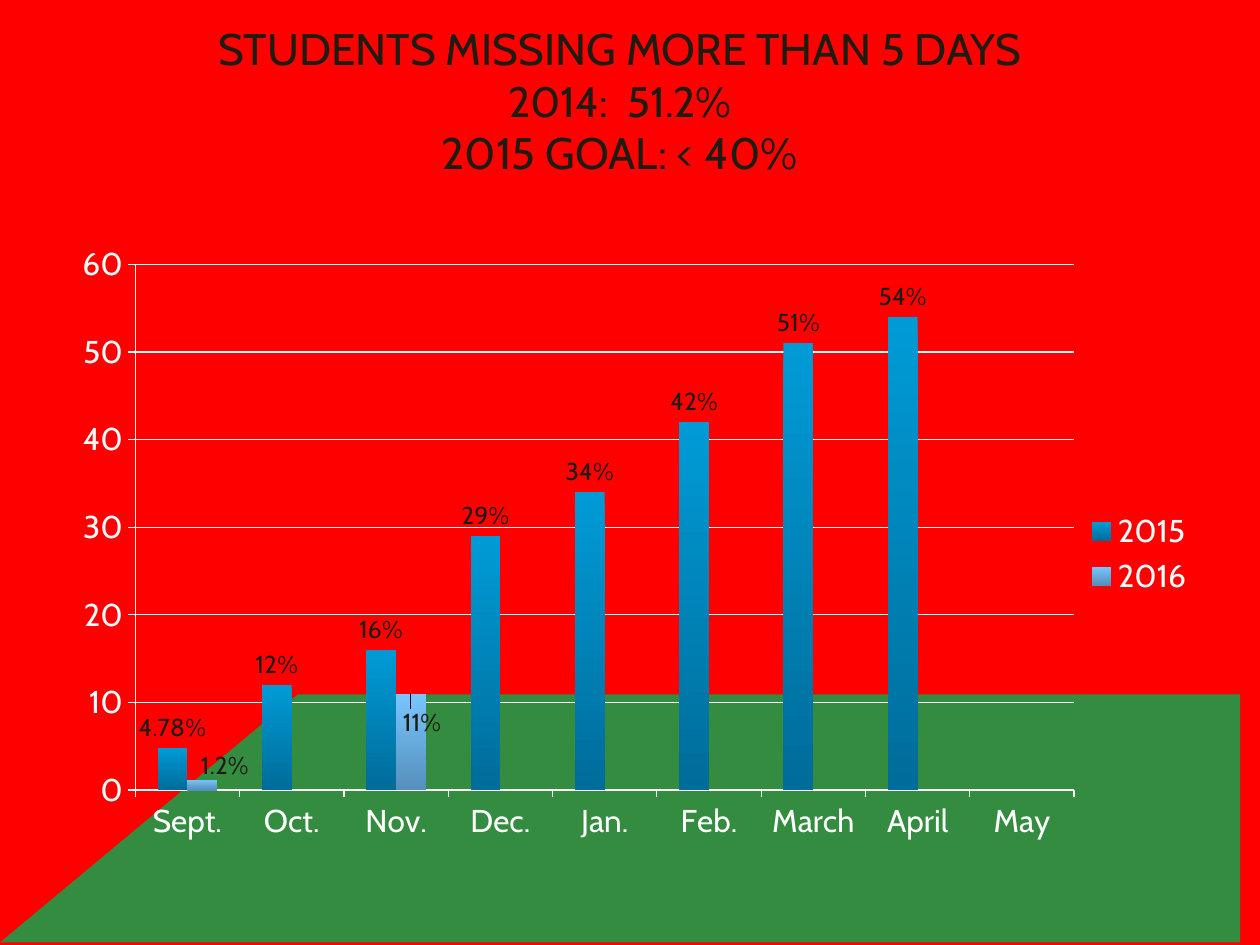
from lxml.etree import SubElement as Sub
from pptx import Presentation
from pptx.chart.data import CategoryChartData as Data
from pptx.dml.color import RGBColor as Color
from pptx.enum.chart import XL_CHART_TYPE as Kind, XL_LABEL_POSITION as Spot
from pptx.enum.chart import XL_LEGEND_POSITION as Side, XL_TICK_MARK as Tick
from pptx.enum.text import MSO_ANCHOR as Anchor, MSO_AUTO_SIZE as Auto, PP_ALIGN as Align
from pptx.oxml.ns import qn
from pptx.util import Cm, Pt

FONT, WHITE, DARK = "Cabin", "FFFFFF", "1E1C11"
TITLE = [
    ("STUDENTS MISSING MORE THAN 5 DAYS", 25.2),
    ("2014:  51.2%", 24.3),
    ("2015 GOAL: < 40%", 25.2),
]
MONTHS = ["Sept.", "Oct.", "Nov.", "Dec.", "Jan.", "Feb.", "March", "April", "May"]
SERIES = [
    ("2015", [4.78, 12, 16, 29, 34, 42, 51, 54, None], ("009BD6", "006C9A")),
    ("2016", [1.2, None, 11] + [None] * 6, ("78C6FF", "568FBB")),
]
MOVED = {0: ("1.2%", 0.02, 0.01), 2: ("11%", 0.01, 0.08)}
PLOT = {"x": 0.055, "y": 0.036, "w": 0.828, "h": 0.843}
HILL = [(0, 19.05), (5.66, 14.02), (25.4, 14.05), (25.4, 19.05)]


def paint(fill, tone):
    fill.solid()
    fill.fore_color.rgb = Color.from_string(tone)


def style(font, size, tone):
    font.name, font.size, font.bold = FONT, Pt(size), False
    font.color.rgb = Color.from_string(tone)


def place(layout, parts):
    box = Sub(layout, qn("c:manualLayout"))
    for tag, val in parts.items():
        Sub(box, qn("c:" + tag)).set("val", str(val))


def add_hill(slide):
    build = slide.shapes.build_freeform(*HILL[0], scale=float(Cm(1)))
    build.add_line_segments(HILL[1:], close=True)
    hill = build.convert_to_shape()
    hill.shadow.inherit = False
    hill.line.fill.background()
    paint(hill.fill, "00B050")
    tone = hill.fill._xPr.find(".//" + qn("a:srgbClr"))
    Sub(tone, qn("a:alpha")).set("val", "80000")


def add_title(slide):
    title = slide.shapes.title
    title.left, title.top, title.width, title.height = Cm(0.43), Cm(0.43), Cm(24.13), Cm(3.18)
    frame = title.text_frame
    frame.text = "\v".join(text for text, size in TITLE)
    frame.auto_size, frame.word_wrap = Auto.NONE, True
    frame.vertical_anchor = Anchor.MIDDLE
    para = frame.paragraphs[0]
    para.alignment, para.line_spacing = Align.CENTER, 1.0
    for run, (text, size) in zip(para.runs, TITLE):
        style(run.font, size, DARK)


def add_labels(series):
    labels = series.data_labels
    labels.show_value = True
    labels.number_format, labels.number_format_is_linked = 'General"%"', False
    labels.position = Spot.OUTSIDE_END
    style(labels.font, 14, DARK)


def move_labels(series):
    for index, (text, x, y) in MOVED.items():
        label = series.points[index].data_label
        label.text_frame.text = text
        style(label.text_frame.paragraphs[0].runs[0].font, 14, DARK)
        label.position = Spot.OUTSIDE_END
        node = series.data_labels._element.xpath(f"c:dLbl[c:idx/@val='{index}']")[0]
        for old in node.findall(qn("c:layout")):
            node.remove(old)
        layout = Sub(node, qn("c:layout"))
        place(layout, {"x": x, "y": y})
        node.insert(1, layout)


def add_chart(slide):
    data = Data()
    data.categories = MONTHS
    for name, vals, tones in SERIES:
        data.add_series(name, vals)
    chart = slide.shapes.add_chart(
        Kind.COLUMN_CLUSTERED, Cm(1.47), Cm(4.88), Cm(22.86), Cm(12.57), data).chart
    style(chart.font, 18, WHITE)
    chart.has_title = False
    chart.has_legend = True
    chart.legend.position, chart.legend.include_in_layout = Side.RIGHT, False

    cats, vals = chart.category_axis, chart.value_axis
    vals.minimum_scale, vals.maximum_scale, vals.major_unit = 0, 60, 10
    vals.has_major_gridlines = True
    for line in (cats.format.line, vals.format.line, vals.major_gridlines.format.line):
        paint(line.fill, WHITE)
        line.width = Pt(0.75)
    for axis in (cats, vals):
        axis.major_tick_mark, axis.minor_tick_mark = Tick.OUTSIDE, Tick.NONE

    plot = chart.plots[0]
    plot.gap_width, plot.overlap, plot.vary_by_categories = 150, 0, False
    for series, (name, nums, tones) in zip(plot.series, SERIES):
        fill = series.format.fill
        fill.gradient()
        fill.gradient_angle = 270
        for stop, tone in zip(fill.gradient_stops, tones):
            stop.color.rgb = Color.from_string(tone)
        add_labels(series)
    move_labels(plot.series[1])

    area = chart._chartSpace.chart.plotArea
    for old in area.findall(qn("c:layout")):
        area.remove(old)
    layout = Sub(area, qn("c:layout"))
    place(layout, {"layoutTarget": "inner", "xMode": "edge", "yMode": "edge", **PLOT})
    area.insert(0, layout)


def main():
    deck = Presentation()
    deck.slide_width, deck.slide_height = Cm(25.4), Cm(19.05)
    slide = deck.slides.add_slide(deck.slide_layouts[5])
    paint(slide.background.fill, "FF0000")
    add_hill(slide)
    add_title(slide)
    add_chart(slide)
    deck.save("out.pptx")


if __name__ == "__main__":
    main()
